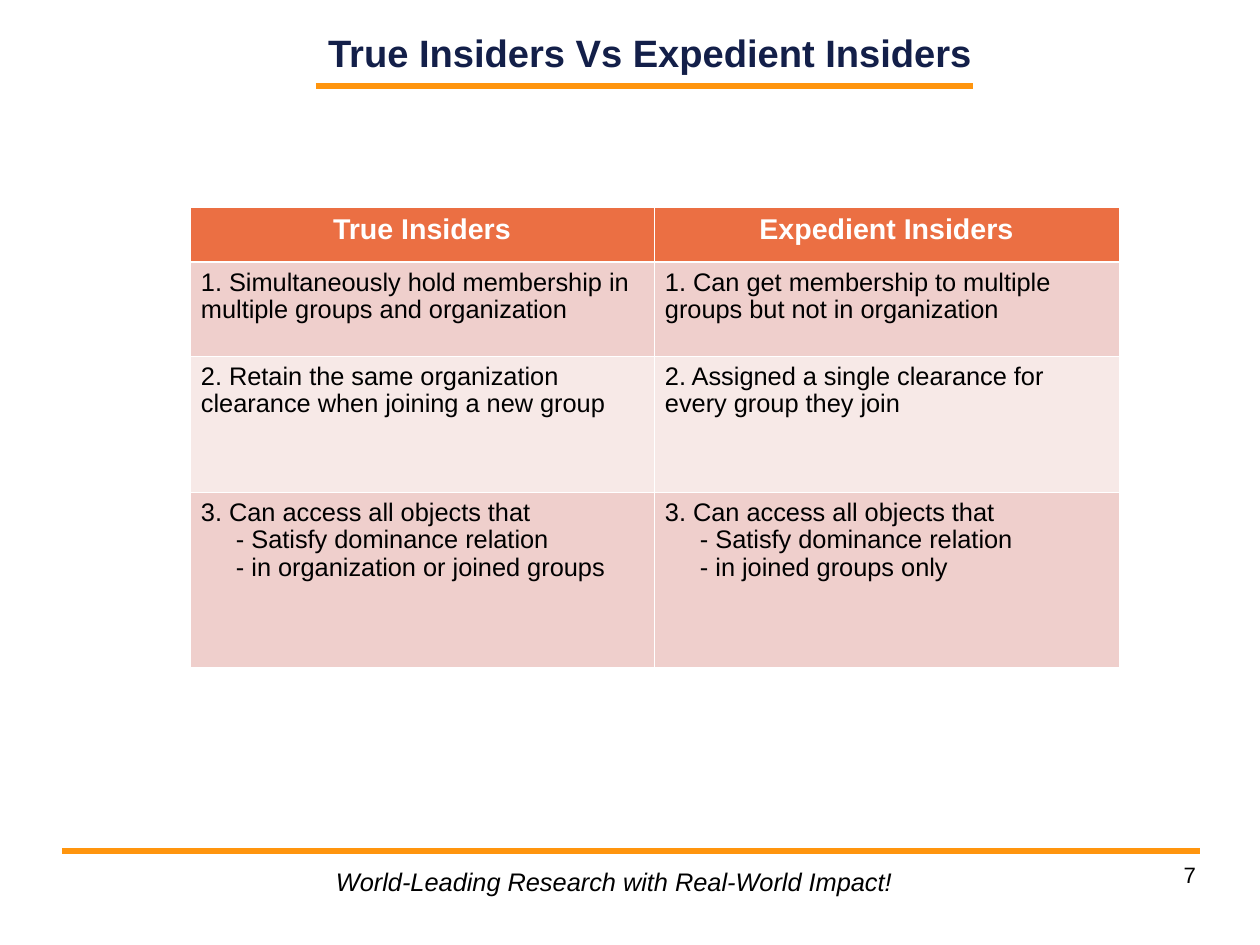
from lxml import etree
from pptx import Presentation
from pptx import util as u
from pptx.dml.color import RGBColor
from pptx.enum import shapes, text
from pptx.oxml import ns

PX = 8000  # EMU per px, 1260 by 945 px to the slide
FONT = "Arial"
ORANGE = RGBColor(0xFF, 0x95, 0x0E)
NAVY = RGBColor(0x13, 0x1F, 0x49)
BLACK = RGBColor(0x00, 0x00, 0x00)
WHITE = RGBColor(0xFF, 0xFF, 0xFF)
HEADER_FILL = RGBColor(0xEB, 0x6F, 0x43)
BAND_FILLS = [RGBColor(0xF7, 0xE9, 0xE7), RGBColor(0xEF, 0xCF, 0xCC)]

COLUMN_WIDTHS = [464, 465]
ROW_HEIGHTS = [55, 94, 136, 175]
SUB_ITEM_INDENT = 35
CELL_SPACING = 0.98
THIN, THICK = 0.45, 1.47
ROWS = [
    ("True Insiders", "Expedient Insiders"),
    ("1. Simultaneously hold membership in multiple groups and organization",
     "1. Can get membership to multiple groups but not in organization"),
    ("2. Retain the same organization clearance when joining a new group",
     "2. Assigned a single clearance for every group they join"),
    ("3. Can access all objects that\n- Satisfy dominance relation\n"
     "- in organization or joined groups",
     "3. Can access all objects that\n- Satisfy dominance relation\n"
     "- in joined groups only"),
]


def px(*lengths):
    return [u.Emu(length * PX) for length in lengths]


def style_paragraph(paragraph, size, color, align, spacing=1.0, bold=False, italic=False):
    paragraph.alignment = align
    paragraph.line_spacing = spacing
    for run in paragraph.runs:
        font = run.font
        font.name, font.size, font.color.rgb = FONT, u.Pt(size), color
        font.bold, font.italic = bold, italic


def add_label(slide, box, words, size, color, align, margins=(0, 0),
              anchor=text.MSO_ANCHOR.TOP, wrap=True, **style):
    frame = slide.shapes.add_textbox(*px(*box)).text_frame
    frame.text = words
    frame.word_wrap = wrap
    frame.vertical_anchor = anchor
    side, top = px(*margins)
    frame.margin_left = frame.margin_right = side
    frame.margin_top = frame.margin_bottom = top
    style_paragraph(frame.paragraphs[0], size, color, align, **style)


def add_rule(slide, left, y, width):
    rule = slide.shapes.add_connector(
        shapes.MSO_CONNECTOR.STRAIGHT, *px(left, y, left + width, y))
    rule.line.color.rgb = ORANGE
    rule.line.width = u.Pt(4.31)
    etree.SubElement(rule._element.spPr, ns.qn("a:effectLst"))


def set_borders(cell, widths):
    properties = cell._tc.get_or_add_tcPr()
    for position, (side, width) in enumerate(widths.items()):
        line = etree.Element(ns.qn(f"a:ln{side}"), w=str(u.Pt(width)))
        fill = etree.SubElement(line, ns.qn("a:solidFill"))
        etree.SubElement(fill, ns.qn("a:srgbClr"), val=str(WHITE))
        properties.insert(position, line)


def fill_cell(cell, words, row):
    is_header = row == 0
    cell.text = words
    cell.margin_left, cell.margin_right, cell.margin_top, cell.margin_bottom = px(11, 11, 7, 6)
    cell.fill.solid()
    cell.fill.fore_color.rgb = HEADER_FILL if is_header else BAND_FILLS[row % 2]
    set_borders(cell, {"L": THIN, "R": THIN,
                       "T": THICK if row == 1 else THIN,
                       "B": THICK if is_header else THIN})
    for paragraph in cell.text_frame.paragraphs:
        if paragraph.text.startswith("-"):
            paragraph._p.get_or_add_pPr().set("marL", str(SUB_ITEM_INDENT * PX))
        if is_header:
            style_paragraph(paragraph, 18, WHITE, text.PP_ALIGN.CENTER, CELL_SPACING, bold=True)
        else:
            style_paragraph(paragraph, 16, BLACK, text.PP_ALIGN.LEFT, CELL_SPACING)


def add_header(slide, left, top, width, height):
    add_rule(slide, left, top + height - 9, width)
    add_label(slide, (left + 10, top, width - 9, height), "True Insiders Vs Expedient Insiders",
              24, NAVY, text.PP_ALIGN.CENTER, anchor=text.MSO_ANCHOR.MIDDLE, bold=True)


def add_comparison(slide, left, top):
    box = px(left, top, sum(COLUMN_WIDTHS), sum(ROW_HEIGHTS))
    table = slide.shapes.add_table(len(ROWS), len(COLUMN_WIDTHS), *box).table
    table.horz_banding = False
    for column, width in zip(table.columns, px(*COLUMN_WIDTHS)):
        column.width = width
    for index, (row, height) in enumerate(zip(table.rows, px(*ROW_HEIGHTS))):
        row.height = height
        for cell, words in zip(row.cells, ROWS[index]):
            fill_cell(cell, words, index)


def add_footer(slide, left, top, width):
    add_rule(slide, left, top, width)
    # Motto and page number
    add_label(slide, (left + 263, top + 9, 581, 42),
              "World-Leading Research with Real-World Impact!", 16, BLACK,
              text.PP_ALIGN.LEFT, margins=(11, 6), wrap=False, italic=True)
    add_label(slide, (left + width - 298, top + 10, 294, 65), "7", 14, BLACK,
              text.PP_ALIGN.RIGHT, spacing=1.01)


def main():
    presentation = Presentation()
    presentation.slide_width, presentation.slide_height = px(1260, 945)
    slide = presentation.slides.add_slide(presentation.slide_layouts[6])
    add_header(slide, 316, 9, 657, 86)
    add_comparison(slide, 190, 207)
    add_footer(slide, 62, 851, 1138)
    presentation.save("out.pptx")


if __name__ == "__main__":
    main()
